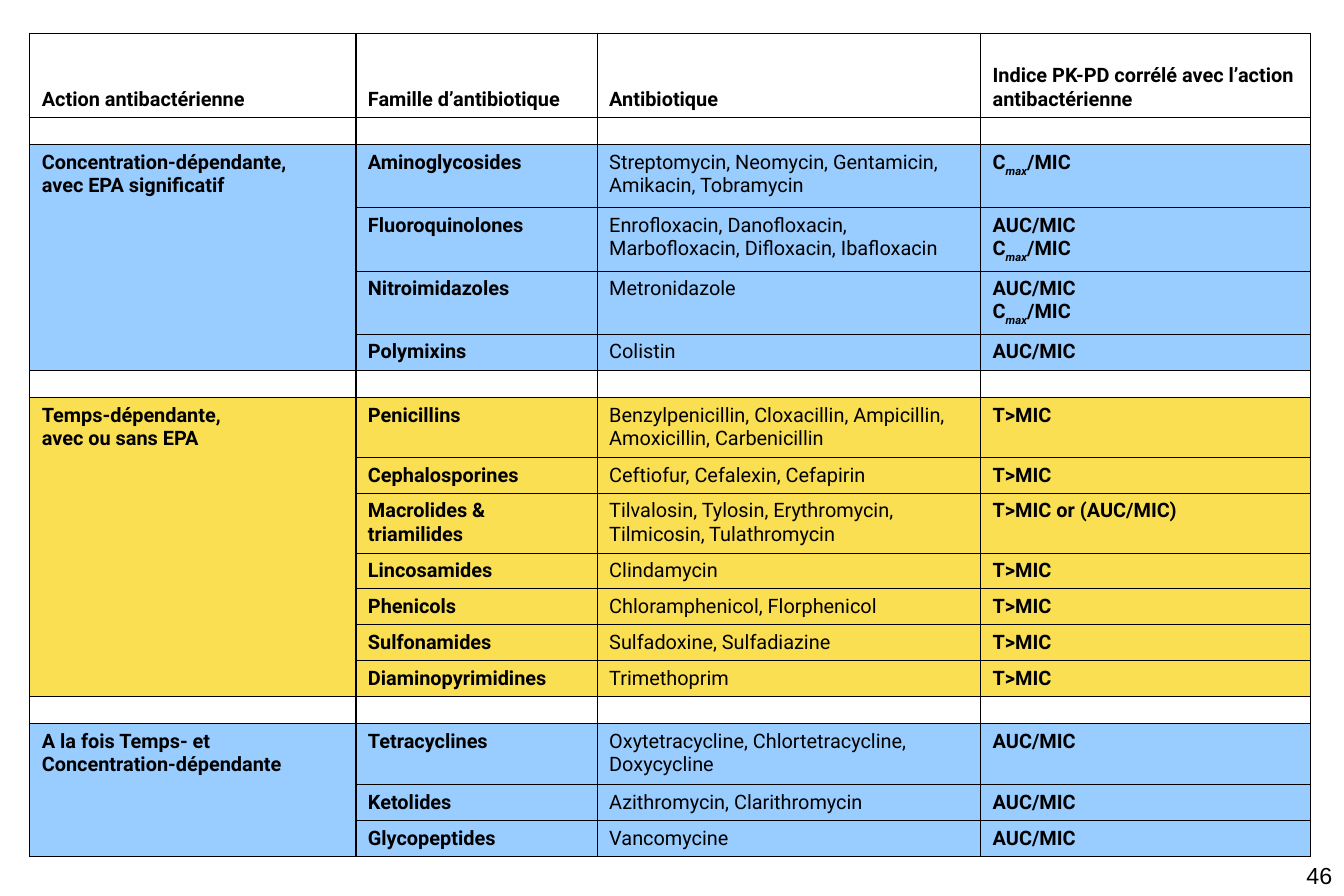
"""Builds the slide that links antibiotic families to their PK-PD index."""
from lxml.etree import SubElement
from pptx import Presentation
from pptx.dml.color import RGBColor
from pptx.enum.text import MSO_ANCHOR as Anchor, PP_ALIGN as Align
from pptx.oxml import parse_xml
from pptx.oxml.ns import nsdecls, qn
from pptx.util import Inches, Pt

COLORS = {"ink": "000000", "blue": "99CCFF", "yellow": "FBDF53"}
HEADINGS = ["Action antibactérienne", "Famille d’antibiotique", "Antibiotique",
            "Indice PK-PD corrélé avec l’action antibactérienne"]
COLUMN_WIDTHS = [2.73, 2.02, 3.21, 2.76]
HEADING_HEIGHT, GAP_HEIGHT = 0.7, 0.23
CMAX = "C_max_/MIC"
GROUPS = [
    ("Concentration-dépendante,\navec EPA significatif", "blue", [
        ("Aminoglycosides", "Streptomycin, Neomycin, Gentamicin, Amikacin, Tobramycin", CMAX, 0.53),
        ("Fluoroquinolones", "Enrofloxacin, Danofloxacin, Marbofloxacin, Difloxacin, Ibafloxacin",
         "AUC/MIC\n" + CMAX, 0.53),
        ("Nitroimidazoles", "Metronidazole", "AUC/MIC\n" + CMAX, 0.53),
        ("Polymixins", "Colistin", "AUC/MIC", 0.3),
    ]),
    ("Temps-dépendante,\navec ou sans EPA", "yellow", [
        ("Penicillins", "Benzylpenicillin, Cloxacillin, Ampicillin, Amoxicillin, Carbenicillin",
         "T>MIC", 0.5),
        ("Cephalosporines", "Ceftiofur, Cefalexin, Cefapirin", "T>MIC", 0.3),
        ("Macrolides & triamilides", "Tilvalosin, Tylosin, Erythromycin, Tilmicosin, Tulathromycin",
         "T>MIC or (AUC/MIC)", 0.5),
        ("Lincosamides", "Clindamycin", "T>MIC", 0.3),
        ("Phenicols", "Chloramphenicol, Florphenicol", "T>MIC", 0.3),
        ("Sulfonamides", "Sulfadoxine, Sulfadiazine", "T>MIC", 0.3),
        ("Diaminopyrimidines", "Trimethoprim", "T>MIC", 0.3),
    ]),
    ("A la fois Temps- et Concentration-dépendante", "blue", [
        ("Tetracyclines", "Oxytetracycline, Chlortetracycline, Doxycycline", "AUC/MIC", 0.51),
        ("Ketolides", "Azithromycin, Clarithromycin", "AUC/MIC", 0.3),
        ("Glycopeptides", "Vancomycine", "AUC/MIC", 0.3),
    ]),
]


class SlideBuilder:
    """Holds the text style and the current slide."""

    def __init__(self, slide):
        self.slide = slide
        self.table_font, self.number_font = "Roboto", "Arial"

    def style(self, paragraph, name, size, bold=False):
        """Set the font of a whole paragraph."""
        font = paragraph.font
        font.name, font.size, font.bold = name, Pt(size), bold
        font.color.rgb = RGBColor.from_string(COLORS["ink"])

    def cell_text(self, cell, text, bold=True):
        """Fill a cell, with text between underscores as an italic subscript."""
        for index, line in enumerate(text.split("\n")):
            frame = cell.text_frame
            paragraph = frame.add_paragraph() if index else frame.paragraphs[0]
            self.style(paragraph, self.table_font, 12, bold)
            for part, piece in enumerate(line.split("_")):
                run = paragraph.add_run()
                run.text = piece
                if part % 2:
                    run.font.italic = True
                    run._r.get_or_add_rPr().set("baseline", "-30000")

    def paint(self, cell, color):
        """Fill a cell with a named colour, or leave it clear."""
        if color:
            cell.fill.solid()
            cell.fill.fore_color.rgb = RGBColor.from_string(COLORS[color])
        else:
            cell.fill.background()

    def border(self, cell, top, bottom):
        """Draw the four borders of a cell, with given top and bottom widths."""
        properties = cell._tc.get_or_add_tcPr()
        for index, (side, width) in enumerate(zip("LRTB", (0.75, 0.75, top, bottom))):
            properties.insert(index, parse_xml(
                f'<a:ln{side} {nsdecls("a")} w="{Pt(width)}"><a:solidFill>'
                f'<a:srgbClr val="{COLORS["ink"]}"/></a:solidFill></a:ln{side}>'))

    def shrink(self, cell):
        """Keep an empty cell low."""
        cell.margin_top = cell.margin_bottom = Inches(0.02)
        SubElement(cell.text_frame.paragraphs[0]._p, qn("a:endParaRPr")).set("sz", "600")

    def table(self, left, top, widths, heights):
        """Add a plain table with the given column widths and row heights."""
        table = self.slide.shapes.add_table(
            len(heights), len(widths), Inches(left), Inches(top),
            Inches(sum(widths)), Inches(sum(heights))).table
        table.first_row = table.horz_banding = False
        for column, width in zip(table.columns, widths):
            column.width = Inches(width)
        for row, height in zip(table.rows, heights):
            row.height = Inches(height)
        return table

    def antibiotic_table(self, left, top):
        """Add the table of antibiotic groups, each preceded by an empty row."""
        heights = [HEADING_HEIGHT]
        for _, _, families in GROUPS:
            heights += [GAP_HEIGHT] + [family[-1] for family in families]
        table = self.table(left, top, COLUMN_WIDTHS, heights)
        row_colors = [None] * len(heights)
        for column, heading in enumerate(HEADINGS):
            cell = table.cell(0, column)
            cell.vertical_anchor = Anchor.BOTTOM
            self.cell_text(cell, heading)
        row = 1
        for action, color, families in GROUPS:
            for column in range(len(HEADINGS)):
                self.shrink(table.cell(row, column))
            first = row + 1
            row = first + len(families)
            table.cell(first, 0).merge(table.cell(row - 1, 0))
            self.cell_text(table.cell(first, 0), action)
            for index, (family, drugs, pk_index, _) in enumerate(families, first):
                row_colors[index] = color
                self.cell_text(table.cell(index, 1), family)
                self.cell_text(table.cell(index, 2), drugs, bold=False)
                self.cell_text(table.cell(index, 3), pk_index)
        last = len(heights) - 1
        for index, color in enumerate(row_colors):
            for column in range(len(HEADINGS)):
                cell = table.cell(index, column)
                ends_table = index == last or (
                    cell.is_merge_origin and index + cell.span_height > last)
                self.paint(cell, color)
                self.border(cell, 1 if index == 0 else 0.75, 1 if ends_table else 0.75)

    def page_number(self, text, left, top, width, height):
        """Add the right-aligned page number."""
        frame = self.slide.shapes.add_textbox(
            Inches(left), Inches(top), Inches(width), Inches(height)).text_frame
        frame.word_wrap = True
        frame.vertical_anchor = Anchor.MIDDLE
        paragraph = frame.paragraphs[0]
        paragraph.text = text
        paragraph.alignment = Align.RIGHT
        self.style(paragraph, self.number_font, 14)


def main():
    """Build and save the slide."""
    deck = Presentation()
    deck.slide_width, deck.slide_height = Inches(11.25), Inches(7.5)
    builder = SlideBuilder(deck.slides.add_slide(deck.slide_layouts[6]))
    builder.antibiotic_table(0.25, 0.28)
    builder.page_number("46", 8.34, 7.15, 2.91, 0.35)
    deck.save("out.pptx")


if __name__ == "__main__":
    main()
